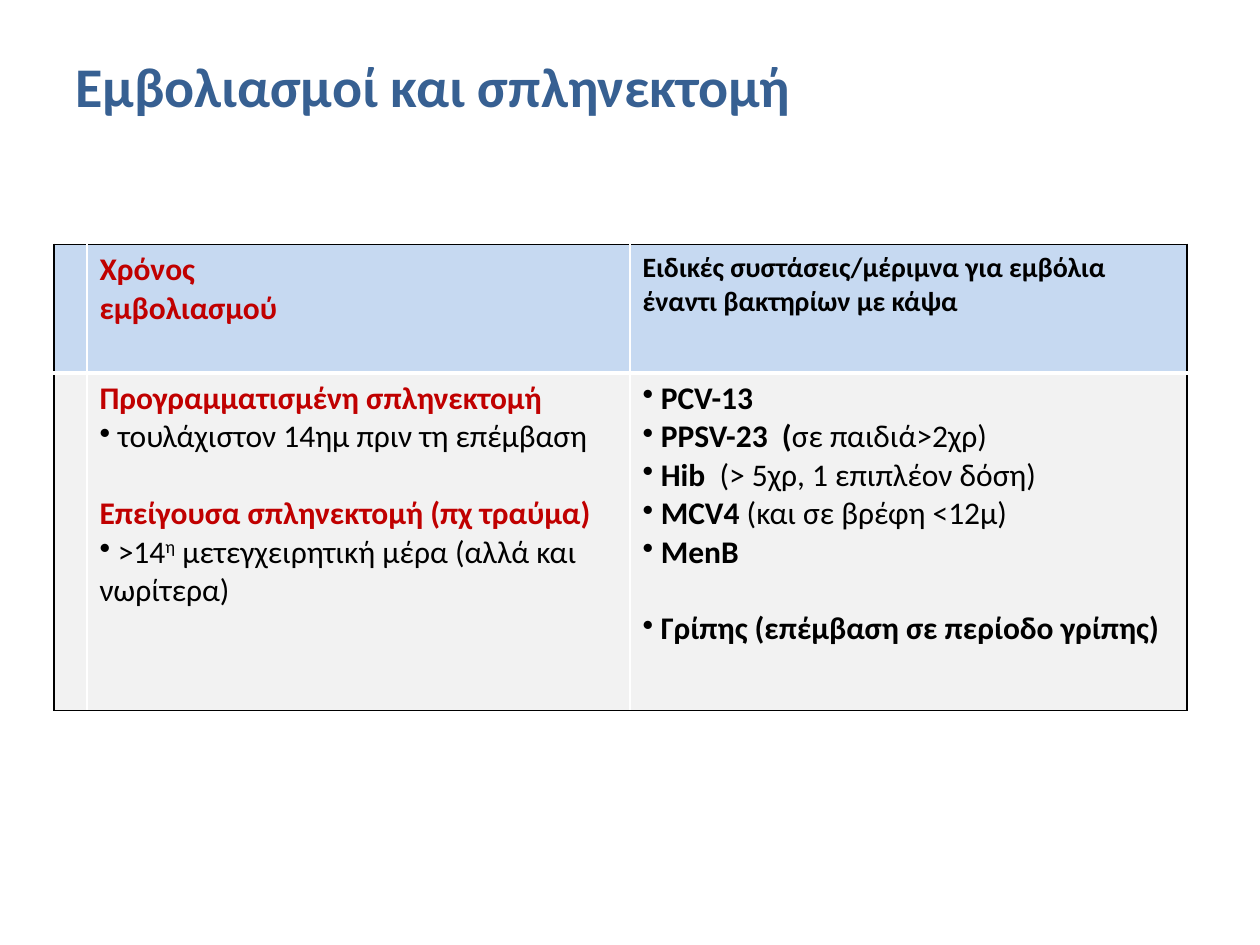
"""Builds a slide on vaccination and splenectomy."""
from dataclasses import dataclass

import pptx
import pptx.dml.color
import pptx.enum.text
import pptx.oxml
import pptx.oxml.ns
import pptx.slide
import pptx.table
import pptx.text.text
import pptx.util
from pptx.util import Inches


@dataclass(frozen=True)
class Theme:
    font: str = "Calibri"
    title: str = "376092"
    accent: str = "C00000"
    ink: str = "000000"
    rule: str = "FFFFFF"
    header_fill: str = "C6D9F1"
    body_fill: str = "F2F2F2"
    title_size: float = 32
    body_size: float = 18
    small_size: float = 16
    blank_line: float = 22
    thin: float = 1
    thick: float = 3


THEME = Theme()


@dataclass(frozen=True)
class Span:
    text: str
    bold: bool = False
    superscript: bool = False


@dataclass(frozen=True)
class Line:
    spans: tuple[Span, ...]
    color: str = THEME.ink
    size: float = THEME.body_size
    bullet: bool = False
    gap: float = 0


def heading(text: str, color: str = THEME.accent, size: float = THEME.body_size, gap: float = 0) -> Line:
    return Line((Span(text, bold=True),), color, size, gap=gap)


def item(*spans: Span, gap: float = 0) -> Line:
    return Line(spans, bullet=True, gap=gap)


ROWS = (
    (
        (),
        (heading("Χρόνος"), heading("εμβολιασμού")),
        (heading("Ειδικές συστάσεις/μέριμνα για εμβόλια έναντι βακτηρίων με κάψα",
                 THEME.ink, THEME.small_size),),
    ),
    (
        (),
        (
            heading("Προγραμματισμένη σπληνεκτομή"),
            item(Span(" τουλάχιστον 14ημ πριν τη επέμβαση")),
            heading("Επείγουσα σπληνεκτομή (πχ τραύμα)", gap=THEME.blank_line),
            item(Span(" >14"), Span("η", superscript=True),
                 Span(" μετεγχειρητική μέρα (αλλά και νωρίτερα)")),
        ),
        (
            item(Span(" PCV-13", bold=True)),
            item(Span(" PPSV-23  (", bold=True), Span("σε παιδιά>2χρ)")),
            item(Span(" Hib ", bold=True), Span(" (> 5χρ, 1 επιπλέον δόση)")),
            item(Span(" MCV4", bold=True), Span(" (και σε βρέφη <12μ)")),
            item(Span(" ΜenΒ", bold=True)),
            item(Span(" "), Span("Γρίπης (επέμβαση σε περίοδο γρίπης)", bold=True),
                 gap=THEME.blank_line),
        ),
    ),
)
COLUMN_WIDTHS = (0.26, 4.31, 4.42)
ROW_HEIGHTS = (1.02, 2.68)
ROW_FILLS = (THEME.header_fill, THEME.body_fill)


def write_lines(frame: pptx.text.text.TextFrame, lines: tuple[Line, ...]) -> None:
    """Write formatted paragraphs into a text frame."""
    for index, line in enumerate(lines):
        para = frame.add_paragraph() if index else frame.paragraphs[0]
        para.space_before = pptx.util.Pt(line.gap)
        if line.bullet:
            bullet = pptx.oxml.parse_xml(
                f'<a:buChar {pptx.oxml.ns.nsdecls("a")} char="•"/>')
            para._p.get_or_add_pPr().append(bullet)
        for part in line.spans:
            span = para.add_run()
            span.text = part.text
            span.font.name = THEME.font
            span.font.size = pptx.util.Pt(line.size)
            span.font.bold = part.bold
            span.font.color.rgb = pptx.dml.color.RGBColor.from_string(line.color)
            if part.superscript:
                span._r.get_or_add_rPr().set("baseline", "30000")


def add_border(cell: pptx.table._Cell, side: str, color: str, width: float) -> None:
    """Draw one side of a cell."""
    border = pptx.oxml.parse_xml(
        f'<a:ln{side} {pptx.oxml.ns.nsdecls("a")} w="{pptx.util.Pt(width)}">'
        f'<a:solidFill><a:srgbClr val="{color}"/></a:solidFill></a:ln{side}>')
    cell._tc.get_or_add_tcPr().append(border)


def add_title(slide: pptx.slide.Slide, text: str) -> None:
    """Place the slide title."""
    box = slide.shapes.add_textbox(Inches(0.5), Inches(0.28), Inches(9), Inches(0.79))
    box.text_frame.word_wrap = True
    box.text_frame.vertical_anchor = pptx.enum.text.MSO_ANCHOR.MIDDLE
    write_lines(box.text_frame, (heading(text, THEME.title, THEME.title_size),))


def add_vaccine_table(slide: pptx.slide.Slide) -> None:
    """Place the table with a dark outline and white inner rules."""
    last_row, last_column = len(ROW_HEIGHTS) - 1, len(COLUMN_WIDTHS) - 1
    table = slide.shapes.add_table(
        len(ROW_HEIGHTS), len(COLUMN_WIDTHS), Inches(0.43), Inches(1.94),
        Inches(sum(COLUMN_WIDTHS)), Inches(sum(ROW_HEIGHTS))).table
    for column, width in zip(table.columns, COLUMN_WIDTHS):
        column.width = Inches(width)
    for row, height in zip(table.rows, ROW_HEIGHTS):
        row.height = Inches(height)
    outer = (THEME.ink, THEME.thin)
    vertical = (THEME.rule, THEME.thin)
    horizontal = (THEME.rule, THEME.thick)
    for r, row in enumerate(ROWS):
        for c, lines in enumerate(row):
            cell = table.cell(r, c)
            add_border(cell, "L", *(outer if c == 0 else vertical))
            add_border(cell, "R", *(outer if c == last_column else vertical))
            add_border(cell, "T", *(outer if r == 0 else horizontal))
            add_border(cell, "B", *(outer if r == last_row else horizontal))
            cell.fill.solid()
            cell.fill.fore_color.rgb = pptx.dml.color.RGBColor.from_string(ROW_FILLS[r])
            write_lines(cell.text_frame, lines)


def main() -> None:
    """Build and save the deck."""
    deck = pptx.Presentation()
    deck.slide_width, deck.slide_height = Inches(10), Inches(7.5)
    slide = deck.slides.add_slide(deck.slide_layouts[6])
    add_title(slide, "Εμβολιασμοί και σπληνεκτομή")
    add_vaccine_table(slide)
    deck.save("out.pptx")


if __name__ == "__main__":
    main()
